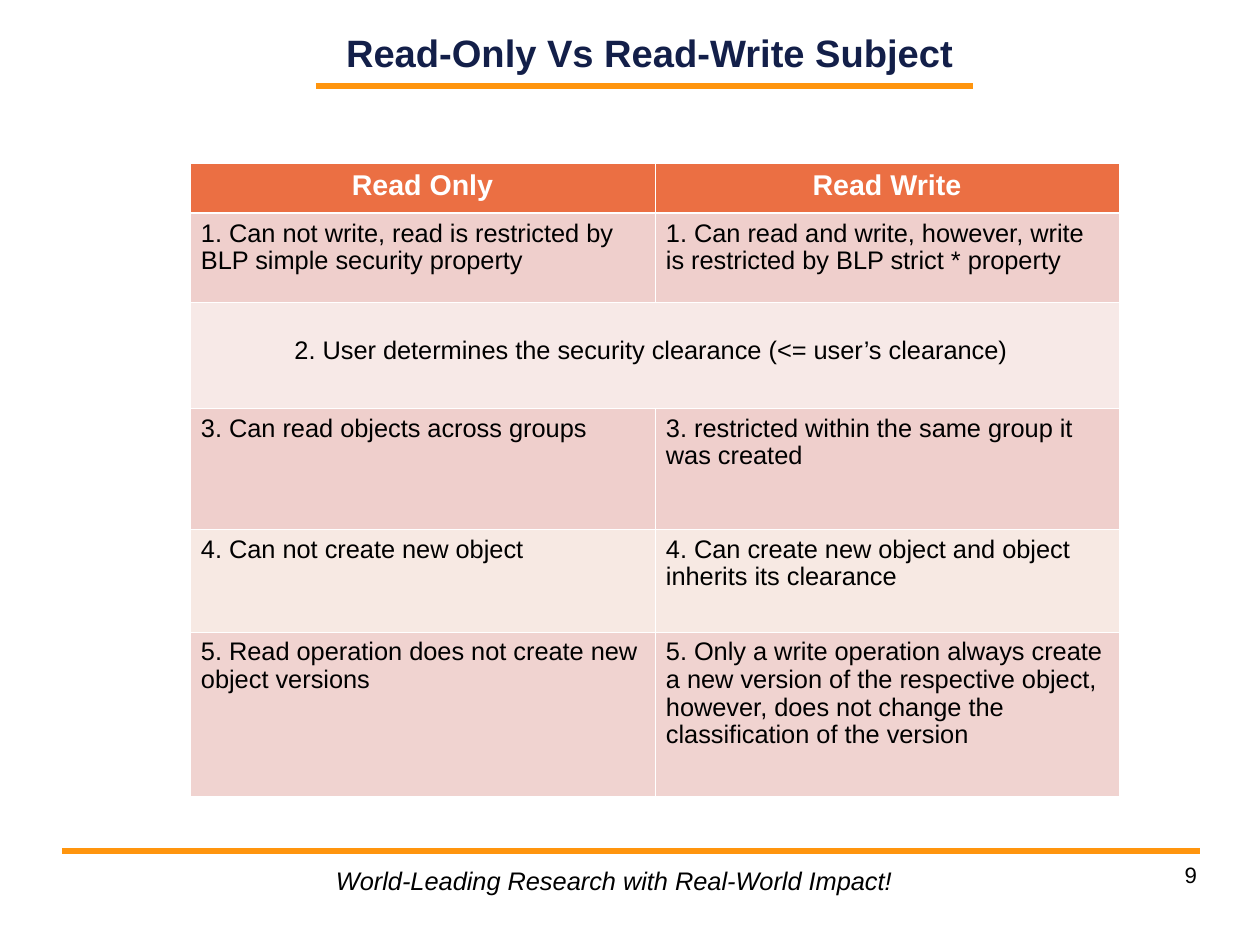
"""Build the slide comparing read-only and read-write subjects."""
from dataclasses import dataclass

from lxml.etree import SubElement
from pptx import Presentation
from pptx.dml.color import RGBColor as RGB
from pptx.enum.shapes import MSO_CONNECTOR as CONNECTOR
from pptx.enum.text import MSO_ANCHOR as ANCHOR, PP_ALIGN as ALIGN
from pptx.oxml.ns import qn
from pptx.util import Pt


@dataclass(frozen=True)
class Theme:
    font: str = "Arial"
    navy: str = "131F49"
    orange: str = "FF950E"
    header: str = "EB6F43"
    rose: str = "EFCFCC"
    pale_rose: str = "F7E9E7"
    pale_peach: str = "F7E9E3"
    light_rose: str = "F0D3D0"
    white: str = "FFFFFF"
    black: str = "000000"
    title_size: int = 24
    header_size: int = 18
    body_size: int = 16
    number_size: int = 14
    rule_width: float = 4.31
    border: float = 0.45
    header_border: float = 1.47


theme = Theme()
PX = 8000


def write(frame, text, size, color=theme.black, align=ALIGN.LEFT, bold=False, italic=False):
    paragraph = frame.paragraphs[0]
    paragraph.text = text
    paragraph.alignment = align
    font = paragraph.font
    font.name, font.size, font.bold, font.italic = theme.font, Pt(size), bold, italic
    font.color.rgb = RGB.from_string(color)
    return paragraph


def add_text(box, text, size, inset=0, wrap=True, anchor=ANCHOR.TOP, **style):
    frame = slide.shapes.add_textbox(*(n * PX for n in box)).text_frame
    frame.word_wrap = wrap
    frame.vertical_anchor = anchor
    frame.margin_left = frame.margin_right = inset * PX
    frame.margin_top = frame.margin_bottom = inset * PX // 2
    return write(frame, text, size, **style)


presentation = Presentation()
presentation.slide_width, presentation.slide_height = 1260 * PX, 945 * PX
slide = presentation.slides.add_slide(presentation.slide_layouts[6])

for left, right, y in ((316, 973, 86), (62, 1200, 851)):
    rule = slide.shapes.add_connector(CONNECTOR.STRAIGHT, left * PX, y * PX, right * PX, y * PX)
    rule.line.color.rgb = RGB.from_string(theme.orange)
    rule.line.width = Pt(theme.rule_width)
    SubElement(rule.element.spPr, qn("a:effectLst"))

add_text((325, 9, 649, 86), "Read-Only Vs Read-Write Subject", theme.title_size,
         anchor=ANCHOR.MIDDLE, color=theme.navy, align=ALIGN.CENTER, bold=True)
add_text((325, 860, 581, 42), "World-Leading Research with Real-World Impact!", theme.body_size,
         inset=11, wrap=False, italic=True)
add_text((903, 861, 294, 65), "9", theme.number_size, align=ALIGN.RIGHT)

rows = [
    (50, theme.header, "Read Only", "Read Write"),
    (89, theme.rose, "1. Can not write, read is restricted by BLP simple security property",
     "1. Can read and write, however, write is restricted by BLP strict * property"),
    (106, theme.pale_rose, "2. User determines the security clearance (<= user’s clearance) ", ""),
    (121, theme.rose, "3. Can read objects across groups",
     "3. restricted within the same group it was created"),
    (103, theme.pale_peach, "4. Can not create new object",
     "4. Can create new object and object inherits its clearance"),
    (164, theme.light_rose, "5. Read operation does not create new object versions",
     "5. Only a write operation always create a new version of the respective object, "
     "however, does not change the classification of the version"),
]
SHARED_ROW = 2
height = sum(row[0] for row in rows)
table = slide.shapes.add_table(len(rows), 2, 190 * PX, 163 * PX, 929 * PX, height * PX).table
for column, width in zip(table.columns, (465, 464)):
    column.width = width * PX
table.cell(SHARED_ROW, 0).merge(table.cell(SHARED_ROW, 1))

for index, (row_height, fill, *texts) in enumerate(rows):
    table.rows[index].height = row_height * PX
    is_header, is_shared = index == 0, index == SHARED_ROW
    for column, text in enumerate(texts):
        cell = table.cell(index, column)
        cell.margin_left = cell.margin_right = 11 * PX
        cell.margin_top = (35 if is_shared else 7) * PX
        cell.margin_bottom = 6 * PX
        for side in "LRTB":
            thick = (index, side) in ((0, "B"), (1, "T"))
            width = Pt(theme.header_border if thick else theme.border)
            edge = SubElement(cell._tc.get_or_add_tcPr(), qn(f"a:ln{side}"), w=str(width))
            SubElement(SubElement(edge, qn("a:solidFill")), qn("a:srgbClr"), val=theme.white)
        cell.fill.solid()
        cell.fill.fore_color.rgb = RGB.from_string(fill)
        if text:
            paragraph = write(cell.text_frame, text,
                              theme.header_size if is_header else theme.body_size,
                              color=theme.white if is_header else theme.black,
                              align=ALIGN.CENTER if is_header or is_shared else ALIGN.LEFT,
                              bold=is_header)
            paragraph.line_spacing = 0.98

presentation.save("out.pptx")
